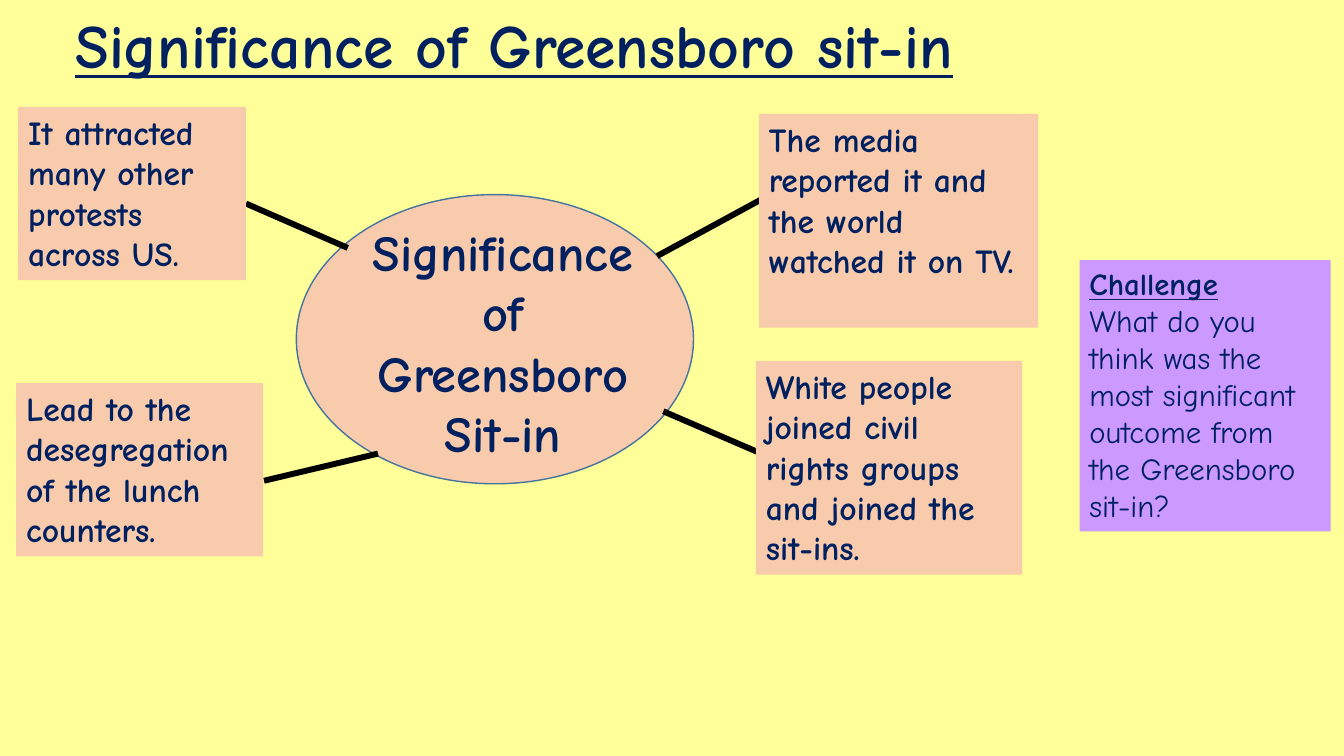
from lxml import etree
from pptx import Presentation
from pptx.dml.color import RGBColor
from pptx.enum.shapes import MSO_CONNECTOR as Connector, MSO_SHAPE as Shape
from pptx.enum.text import MSO_ANCHOR as Anchor, PP_ALIGN as Align
from pptx.oxml.ns import qn
from pptx.util import Pt

YELLOW = RGBColor(0xFF, 0xFF, 0x99)
PEACH = RGBColor(0xF8, 0xCB, 0xAD)
PURPLE = RGBColor(0xCC, 0x99, 0xFF)
NAVY = RGBColor(0x00, 0x20, 0x60)
BLUE = RGBColor(0x43, 0x73, 0x9E)
BLACK = RGBColor(0x00, 0x00, 0x00)
FONT = "Comic Neue"

# Content: areas are left, top, width, height in points
TITLE = "Significance of Greensboro sit-in"
TITLE_AREA = (46.8, -17.3, 828, 104.4)
HUB = ["Significance of Greensboro", "Sit-in"]
HUB_OVAL = (211.7, 139, 283.7, 206.6)
HUB_AREA = (244.1, 154.1, 230.4, 181.4)
REASONS = [  # text, area, spoke from the hub to the box
    ("It attracted many other protests across US.",
     (13, 76.3, 162.7, 123.8), (248.4, 177.1, 175.7, 145.4)),
    ("The media reported it and the world watched it on TV.",
     (542.2, 81.4, 199.4, 152.6), (469.4, 182.9, 545, 141.8)),
    ("White people joined civil rights groups and joined the sit-ins.",
     (540, 257.8, 190.1, 152.6), (473.8, 293.8, 542.2, 323.3)),
    ("Lead to the desegregation of the lunch counters.",
     (11.5, 273.6, 176.4, 123.8), (270, 324, 188.6, 343.4)),
]
CHALLENGE = [
    "Challenge",
    "What do you think was the most significant outcome from the Greensboro sit-in?",
]
CHALLENGE_AREA = (771.1, 185.8, 179.3, 193.7)


def points(values):
    return [Pt(value) for value in values]


def write(box, lines, size, align=Align.LEFT, anchor=Anchor.TOP,
          heading=False, plain_body=False, spacing=None):
    """Fill a box; heading underlines the first line, plain_body unbolds the rest."""
    frame = box.text_frame
    frame.word_wrap = True
    frame.vertical_anchor = anchor
    for index, line in enumerate(lines):
        para = frame.paragraphs[0] if index == 0 else frame.add_paragraph()
        para.alignment = align
        if spacing:
            para.line_spacing = spacing
        span = para.add_run()
        span.text = line
        span.font.name = FONT
        span.font.size = Pt(size)
        span.font.color.rgb = NAVY
        span.font.bold = index == 0 or not plain_body
        span.font.underline = heading and index == 0


def add_filled(page, kind, area, fill, outline=None):
    box = page.shapes.add_shape(kind, *points(area))
    box.shadow.inherit = False
    box.fill.solid()
    box.fill.fore_color.rgb = fill
    if outline:
        box.line.color.rgb = outline
        box.line.width = Pt(1)
    else:
        box.line.fill.background()
    return box


def add_spoke(page, ends):
    spoke = page.shapes.add_connector(Connector.STRAIGHT, *points(ends))
    spoke.line.color.rgb = BLACK
    spoke.line.width = Pt(4.25)
    etree.SubElement(spoke._element.spPr, qn("a:effectLst"))


def main():
    deck = Presentation()
    deck.slide_width, deck.slide_height = Pt(960), Pt(540)
    page = deck.slides.add_slide(deck.slide_layouts[6])
    page.background.fill.solid()
    page.background.fill.fore_color.rgb = YELLOW

    # Title
    title = page.shapes.add_textbox(*points(TITLE_AREA))
    write(title, [TITLE], 44, anchor=Anchor.MIDDLE, heading=True, spacing=0.9)

    # Central oval and its label
    add_filled(page, Shape.OVAL, HUB_OVAL, PEACH, outline=BLUE)
    write(page.shapes.add_textbox(*points(HUB_AREA)), HUB, 36, align=Align.CENTER)

    # Spokes, then the reasons above them
    for _, _, ends in REASONS:
        add_spoke(page, ends)
    for text, area, _ in REASONS:
        write(add_filled(page, Shape.RECTANGLE, area, PEACH), [text], 24)

    # Challenge question
    challenge = add_filled(page, Shape.RECTANGLE, CHALLENGE_AREA, PURPLE)
    write(challenge, CHALLENGE, 22, heading=True, plain_body=True)

    deck.save("out.pptx")


if __name__ == "__main__":
    main()
